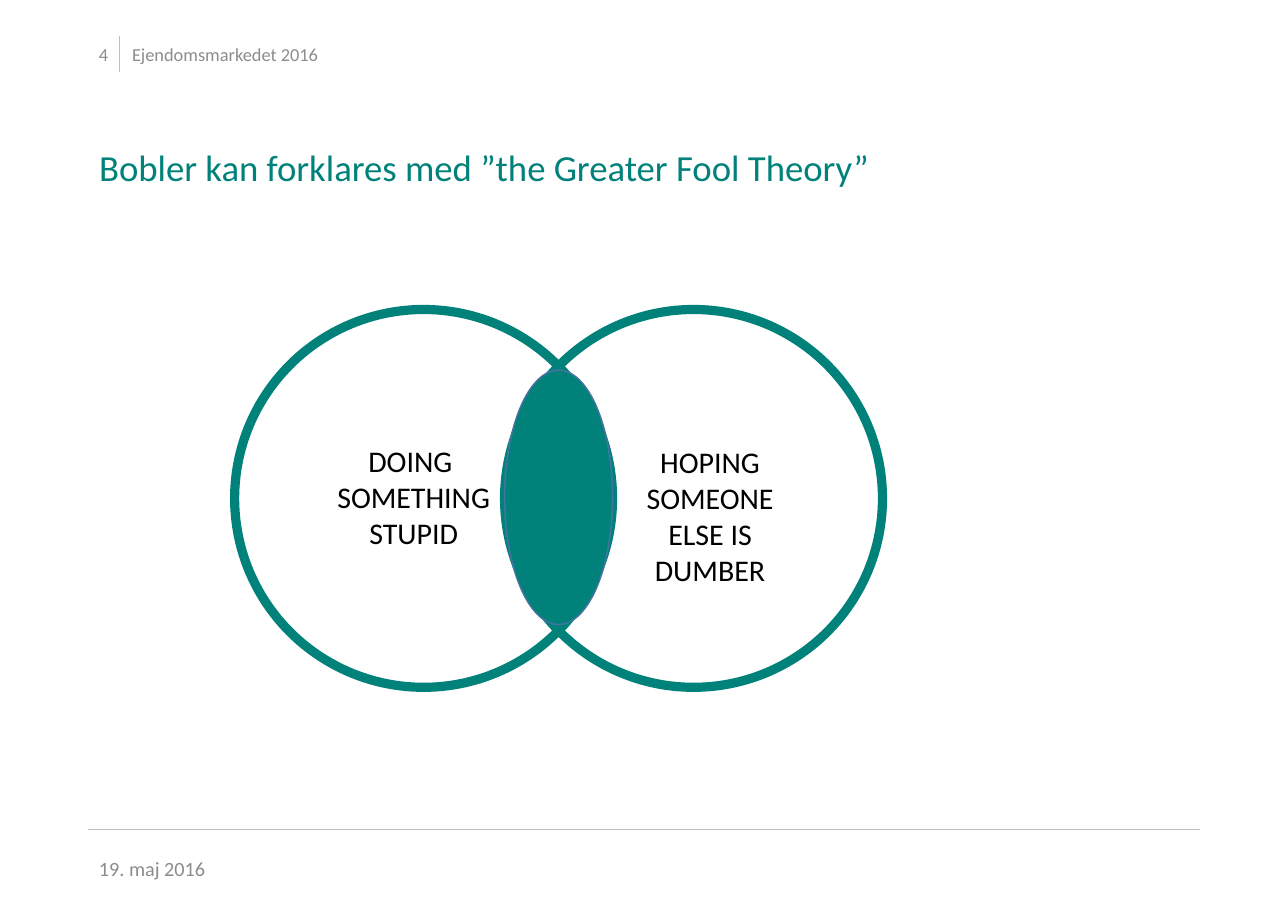
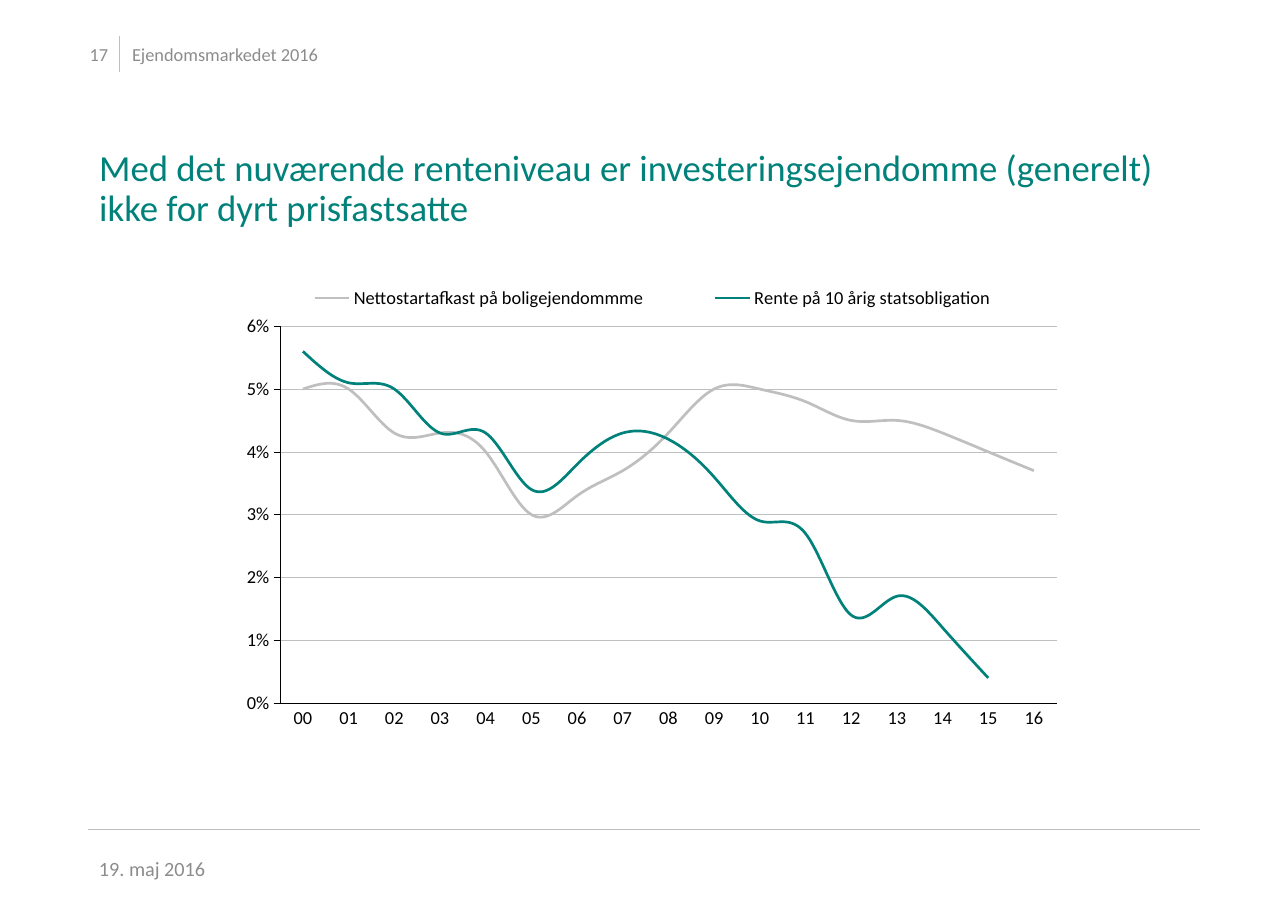
from dataclasses import dataclass
from typing import Any

import pptx
import pptx.chart.data
import pptx.dml.color
import pptx.enum.chart
import pptx.enum.shapes
import pptx.enum.text
import pptx.oxml
import pptx.oxml.ns
import pptx.util
from lxml import etree

# Shared style
PX = 9144  # 100 px to the inch
FONT = "Calibri"
TEAL, SILVER, GREY, BLACK, LENS_EDGE = "00827B", "BFBFBF", "8C8C8C", "000000", "43739E"
TITLE_ONLY = 5
ALIGN = pptx.enum.text.PP_ALIGN
ANCHOR = pptx.enum.text.MSO_ANCHOR


@dataclass(frozen=True)
class Box:
    left: int
    top: int
    width: int
    height: int

    def emu(self) -> tuple[int, ...]:
        return tuple(v * PX for v in (self.left, self.top, self.width, self.height))


@dataclass(frozen=True)
class Label:
    box: Box
    lines: tuple[str, ...]
    size: float
    color: str
    align: Any = ALIGN.LEFT
    anchor: Any = ANCHOR.MIDDLE
    grow: bool = False


@dataclass(frozen=True)
class Rule:
    start: tuple[int, int]
    end: tuple[int, int]
    width: float


@dataclass(frozen=True)
class Oval:
    box: Box
    edge: str
    width: float
    fill: str | None = None


@dataclass(frozen=True)
class Curve:
    name: str
    values: tuple[float | None, ...]
    color: str


RULES = (
    Rule((80, 753), (1089, 753), 0.1),
    Rule((108, 33), (108, 65), 0.5),
)
RUNNING_TEXTS = (
    Label(Box(80, 766, 263, 44), ("19. maj 2016",), 13.2, GREY),
    Label(Box(110, 27, 311, 44), ("Ejendomsmarkedet 2016",), 12, GREY),
)


# Formatting
def rgb(color: str) -> pptx.dml.color.RGBColor:
    return pptx.dml.color.RGBColor.from_string(color)


def apply(target: Any, values: dict[str, Any]) -> None:
    for attribute, value in values.items():
        setattr(target, attribute, value)


def style_font(font: Any, size: float, color: str) -> None:
    apply(font, {"name": FONT, "size": pptx.util.Pt(size), "bold": False})
    font.color.rgb = rgb(color)


def style_line(line: Any, color: str, width: float) -> None:
    line.color.rgb = rgb(color)
    line.width = pptx.util.Pt(width)


# Drawing
def draw_label(slide: Any, label: Label) -> None:
    frame = slide.shapes.add_textbox(*label.box.emu()).text_frame
    sizing = pptx.enum.text.MSO_AUTO_SIZE
    apply(frame, {
        "text": "\n".join(label.lines),
        "word_wrap": True,
        "vertical_anchor": label.anchor,
        "auto_size": sizing.SHAPE_TO_FIT_TEXT if label.grow else sizing.NONE,
    })
    for paragraph in frame.paragraphs:
        paragraph.alignment = label.align
        style_font(paragraph.font, label.size, label.color)


def draw_rule(slide: Any, rule: Rule) -> None:
    ends = (v * PX for v in rule.start + rule.end)
    connector = slide.shapes.add_connector(pptx.enum.shapes.MSO_CONNECTOR.STRAIGHT, *ends)
    style_line(connector.line, SILVER, rule.width)
    etree.SubElement(connector._element.spPr, pptx.oxml.ns.qn("a:effectLst"))


def draw_oval(slide: Any, oval: Oval) -> None:
    shape = slide.shapes.add_shape(pptx.enum.shapes.MSO_SHAPE.OVAL, *oval.box.emu())
    shape.shadow.inherit = False
    style_line(shape.line, oval.edge, oval.width)
    if oval.fill:
        shape.fill.solid()
        shape.fill.fore_color.rgb = rgb(oval.fill)
    else:
        shape.fill.background()


def new_slide(deck: Any, number: int, heading: str, heading_height: int) -> Any:
    slide = deck.slides.add_slide(deck.slide_layouts[TITLE_ONLY])
    for rule in RULES:
        draw_rule(slide, rule)
    page = Label(Box(54, 27, 54, 44), (str(number),), 12, GREY, ALIGN.RIGHT)
    for label in (page, *RUNNING_TEXTS):
        draw_label(slide, label)

    title = slide.shapes.title
    place = Box(80, 131, 1008, heading_height).emu()
    apply(title, dict(zip(("left", "top", "width", "height"), place)))
    apply(title.text_frame, {
        "text": heading,
        "word_wrap": True,
        "vertical_anchor": ANCHOR.TOP,
        "auto_size": pptx.enum.text.MSO_AUTO_SIZE.NONE,
    })
    paragraph = title.text_frame.paragraphs[0]
    apply(paragraph, {"alignment": ALIGN.LEFT, "line_spacing": 0.9})
    style_font(paragraph.font, 24, TEAL)
    return slide


def set_layout(part: Any, index: int, fractions: dict[str, float], inner: bool = False) -> None:
    """Give a chart part a manual place, as fractions of the chart."""
    for old in part.findall(pptx.oxml.ns.qn("c:layout")):
        part.remove(old)
    target = '<c:layoutTarget val="inner"/>' if inner else ""
    modes = '<c:xMode val="edge"/><c:yMode val="edge"/>'
    sizes = "".join(f'<c:{key} val="{value}"/>' for key, value in fractions.items())
    part.insert(index, pptx.oxml.parse_xml(
        f'<c:layout {pptx.oxml.ns.nsdecls("c")}><c:manualLayout>'
        f"{target}{modes}{sizes}</c:manualLayout></c:layout>"
    ))


# Slides
def greater_fool_slide(deck: Any) -> None:
    slide = new_slide(deck, 4, "Bobler kan forklares med ”the Greater Fool Theory”", 82)
    left, shift, top, diameter = 213, 245, 281, 343
    overlap = diameter - shift
    lens = Box(left + shift, 336, overlap, 231)
    for oval in (
        Oval(Box(left, top, diameter, diameter), TEAL, 6),
        Oval(Box(left + shift, top, diameter, diameter), TEAL, 6),
        Oval(lens, LENS_EDGE, 1, TEAL),
    ):
        draw_oval(slide, oval)
    for box, lines in (
        (Box(292, 397, 167, 109), ("DOING ", "SOMETHING", "STUPID")),
        (Box(561, 398, 167, 142), ("HOPING", "SOMEONE ELSE IS DUMBER")),
    ):
        draw_label(slide, Label(box, lines, 19.6, BLACK, ALIGN.CENTER, ANCHOR.TOP, True))


def interest_slide(deck: Any) -> None:
    slide = new_slide(
        deck, 17,
        "Med det nuværende renteniveau er investeringsejendomme (generelt) "
        "ikke for dyrt prisfastsatte", 134,
    )
    curves = (
        Curve("Nettostartafkast på boligejendommme",
              (0.05, 0.05, 0.043, 0.043, 0.04, 0.03, 0.033, 0.037, 0.043,
               0.05, 0.05, 0.048, 0.045, 0.045, 0.043, 0.04, 0.037), SILVER),
        Curve("Rente på 10 årig statsobligation",
              (0.056, 0.051, 0.05, 0.043, 0.043, 0.034, 0.038, 0.043, 0.042,
               0.036, 0.029, 0.027, 0.014, 0.017, 0.012, 0.004, None), TEAL),
    )
    rates = pptx.chart.data.CategoryChartData(number_format="0%")
    rates.categories = [f"{year:02d}" for year in range(17)]
    for curve in curves:
        rates.add_series(curve.name, curve.values)
    chart = slide.shapes.add_chart(
        pptx.enum.chart.XL_CHART_TYPE.LINE, *Box(195, 249, 779, 433).emu(), rates
    ).chart
    chart.has_title = False
    style_font(chart.font, 12, BLACK)
    chart.plots[0].vary_by_categories = False
    for series, curve in zip(chart.plots[0].series, curves):
        series.smooth = True
        style_line(series.format.line, curve.color, 1.75)

    # Axes
    marks = pptx.enum.chart.XL_TICK_MARK
    apply(chart.value_axis, {
        "minimum_scale": 0, "maximum_scale": 0.06, "major_unit": 0.01,
        "has_major_gridlines": True, "major_tick_mark": marks.OUTSIDE,
    })
    chart.category_axis.major_tick_mark = marks.NONE
    apply(chart.value_axis.tick_labels, {"number_format": "0%", "number_format_is_linked": False})
    style_line(chart.value_axis.major_gridlines.format.line, SILVER, 0.2)
    for axis in (chart.category_axis, chart.value_axis):
        axis.minor_tick_mark = marks.NONE
        style_line(axis.format.line, BLACK, 0.2)
        style_font(axis.tick_labels.font, 12, BLACK)

    # Legend above the plot
    chart.has_legend = True
    apply(chart.legend, {
        "position": pptx.enum.chart.XL_LEGEND_POSITION.TOP, "include_in_layout": False,
    })
    style_font(chart.legend.font, 12, BLACK)
    set_layout(chart.legend._element, 1, {"x": 0.04, "y": 0.02, "w": 0.94, "h": 0.06})
    plot_area = chart._chartSpace.chart.plotArea
    set_layout(plot_area, 0, {"x": 0.076, "y": 0.109, "w": 0.905, "h": 0.79}, inner=True)


def main() -> None:
    deck = pptx.Presentation()
    apply(deck, {"slide_width": 1169 * PX, "slide_height": 827 * PX})
    greater_fool_slide(deck)
    interest_slide(deck)
    deck.save("out.pptx")


if __name__ == "__main__":
    main()
